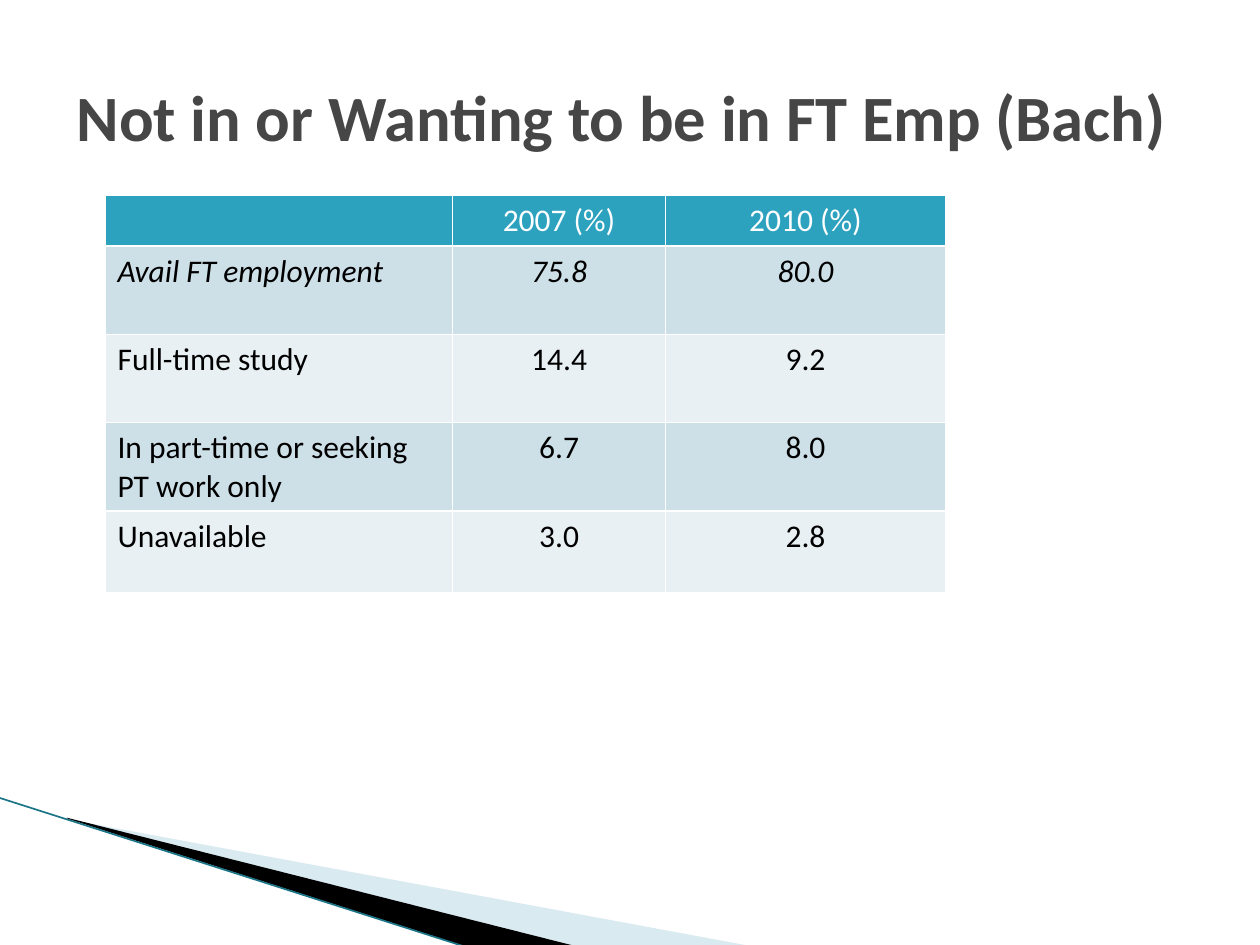
import pptx
import pptx.dml.color
import pptx.enum.shapes
import pptx.enum.text
import pptx.oxml.ns
import pptx.oxml.xmlchemy
import pptx.util
from dataclasses import dataclass

Pt = pptx.util.Pt
ALIGN = pptx.enum.text.PP_ALIGN
ANCHOR = pptx.enum.text.MSO_ANCHOR


@dataclass(frozen=True)
class Theme:
    font: str = "Calibri"
    title_size: float = 36.9
    table_size: float = 18
    title: str = "464646"
    header: str = "2DA2BF"
    bands: tuple = ("CDE0E8", "E8F0F4")
    white: str = "FFFFFF"
    black: str = "000000"
    pale_wedge: str = "A0CBDC"
    edge: str = "1B7587"


THEME = Theme()

COLUMNS = (198.6, 121.8, 159.8)
ROWS = (29.2, 50.4, 50.4, 50, 46.6)
TABLE = (
    ("", "2007 (%)", "2010 (%)"),
    ("Avail FT employment", "75.8", "80.0"),
    ("Full-time study", "14.4", "9.2"),
    ("In part-time or seeking PT work only", "6.7", "8.0"),
    ("Unavailable", "3.0", "2.8"),
)


def rgb(value):
    return pptx.dml.color.RGBColor.from_string(value)


def add_child(parent, tag, **attributes):
    child = pptx.oxml.xmlchemy.OxmlElement(tag)
    for name, value in attributes.items():
        child.set(name, str(value))
    parent.append(child)
    return child


def add_span(para, text, size, color, bold=False, italic=False):
    span = para.add_run()
    span.text = text
    font = span.font
    font.name, font.size = THEME.font, Pt(size)
    font.bold, font.italic = bold, italic
    font.color.rgb = rgb(color)


def add_wedge(page, points, color, opacity=100):
    builder = page.shapes.build_freeform(Pt(points[0][0]), Pt(points[0][1]))
    builder.add_line_segments([(Pt(x), Pt(y)) for x, y in points[1:]], close=True)
    wedge = builder.convert_to_shape()
    wedge.shadow.inherit = False
    wedge.fill.solid()
    wedge.fill.fore_color.rgb = rgb(color)
    wedge.line.fill.background()
    if opacity < 100:
        fill = wedge._element.spPr.find(pptx.oxml.ns.qn("a:solidFill"))
        add_child(fill[0], "a:alpha", val=opacity * 1000)


def add_line(page, start, end, color, width):
    line = page.shapes.add_connector(
        pptx.enum.shapes.MSO_CONNECTOR.STRAIGHT, *map(Pt, start + end))
    line.line.color.rgb = rgb(color)
    line.line.width = Pt(width)
    add_child(line._element.spPr, "a:effectLst")


def add_title(page, text):
    box = page.shapes.add_textbox(Pt(36.7), Pt(21), Pt(648), Pt(90))
    frame = box.text_frame
    frame.word_wrap = True
    frame.vertical_anchor = ANCHOR.MIDDLE
    add_span(frame.paragraphs[0], text, THEME.title_size, THEME.title, bold=True)


def set_cell(cell, text, fill, color, align, italic):
    para = cell.text_frame.paragraphs[0]
    para.alignment = align
    para.font.size = Pt(THEME.table_size)
    if text:
        add_span(para, text, THEME.table_size, color, italic=italic)
    # Borders come before the fill in the cell properties
    properties = cell._tc.get_or_add_tcPr()
    for side in "LRTB":
        border = add_child(properties, f"a:ln{side}", w=Pt(1))
        add_child(add_child(border, "a:solidFill"), "a:srgbClr", val=THEME.white)
    cell.fill.solid()
    cell.fill.fore_color.rgb = rgb(fill)


def add_data_table(page):
    table = page.shapes.add_table(
        len(ROWS), len(COLUMNS), Pt(60), Pt(111.5),
        Pt(sum(COLUMNS)), Pt(sum(ROWS))).table
    for column, width in zip(table.columns, COLUMNS):
        column.width = Pt(width)
    for row, height in zip(table.rows, ROWS):
        row.height = Pt(height)
    for r, values in enumerate(TABLE):
        fill = THEME.bands[(r - 1) % 2] if r else THEME.header
        color = THEME.black if r else THEME.white
        for c, text in enumerate(values):
            align = ALIGN.CENTER if c else ALIGN.LEFT
            set_cell(table.cell(r, c), text, fill, color, align, italic=r == 1)


def main():
    deck = pptx.Presentation()
    deck.slide_width, deck.slide_height = Pt(720), Pt(540)
    page = deck.slides.add_slide(deck.slide_layouts[6])

    # Corner decoration
    add_wedge(page, [(39.6, 468.4), (428.4, 540.5), (328.3, 540.5), (39.6, 468)],
              THEME.pale_wedge, opacity=40)
    add_wedge(page, [(38.2, 467.3), (329, 540.7), (267.8, 541.4), (38.9, 468)],
              THEME.black)
    add_line(page, (-0.7, 455.8), (267.1, 541.4), THEME.edge, 0.95)

    # Content
    add_title(page, "Not in or Wanting to be in FT Emp (Bach)")
    add_data_table(page)
    deck.save("out.pptx")


if __name__ == "__main__":
    main()
